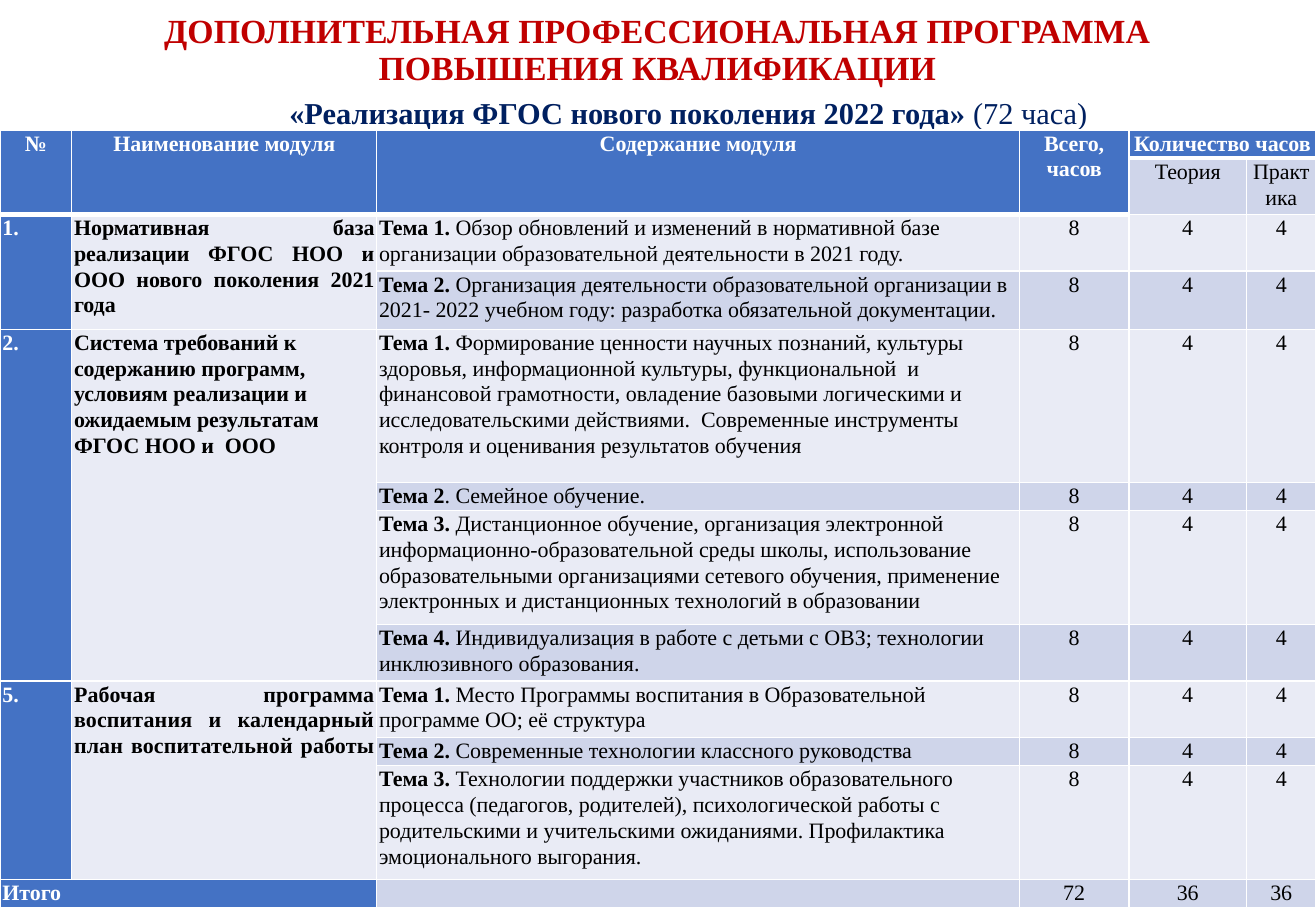
import pptx
import pptx.dml.color
import pptx.enum.text
import pptx.oxml.ns
import pptx.util
from lxml import etree

Inches = pptx.util.Inches
Pt = pptx.util.Pt
ALIGN = pptx.enum.text.PP_ALIGN

FONT = "Times New Roman"
COLORS = {
    "title": "C00000", "subtitle": "002060", "text": "000000",
    "white": "FFFFFF", "blue": "4472C4", "light": "E9EBF5", "dark": "CFD5EA",
}
TITLE_LINES = ["ДОПОЛНИТЕЛЬНАЯ ПРОФЕССИОНАЛЬНАЯ ПРОГРАММА", "ПОВЫШЕНИЯ КВАЛИФИКАЦИИ"]
SUBTITLE = [("«Реализация ФГОС нового поколения 2022 года» ", True), ("(72 часа)", False)]

COLUMN_WIDTHS = [0.59, 2.51, 5.29, 0.9, 0.97, 0.57]
HEADERS = ["№", "Наименование модуля", "Содержание модуля", "Всего, часов", "Количество часов"]
HOUR_KINDS = ["Теория", "Практика"]
HEADER_HEIGHTS = [0.22, 0.46]
TOPIC_HOURS = ["8", "4", "4"]
TOTAL_LABEL, TOTAL_HOURS, TOTAL_HEIGHT = "Итого", ["72", "36", "36"], 0.22

# number, name, alignment, letter spacing, topics as (label, text, row height)
MODULES = [
    ("1.", "Нормативная база реализации ФГОС НОО и ООО нового поколения 2021 года ",
     ALIGN.JUSTIFY, 0, [
        ("Тема 1. ", "Обзор обновлений и изменений в нормативной базе организации "
         "образовательной деятельности в 2021 году.", 0.46),
        ("Тема 2. ", "Организация деятельности образовательной организации в 2021- 2022 "
         "учебном году: разработка обязательной документации.", 0.48),
     ]),
    ("2.", "Система требований к содержанию программ, условиям реализации и ожидаемым "
     "результатам ФГОС НОО и  ООО", ALIGN.LEFT, 0, [
        ("Тема 1. ", "Формирование ценности научных познаний, культуры здоровья, "
         "информационной культуры, функциональной  и финансовой грамотности, овладение "
         "базовыми логическими и исследовательскими действиями.  Современные инструменты "
         "контроля и оценивания результатов обучения", 1.26),
        ("Тема 2", ". Семейное обучение.", 0.22),
        ("Тема 3. ", "Дистанционное обучение, организация электронной "
         "информационно-образовательной среды школы, использование образовательными "
         "организациями сетевого обучения, применение электронных и дистанционных "
         "технологий в образовании", 0.94),
        ("Тема 4. ", "Индивидуализация в работе с детьми с ОВЗ; технологии инклюзивного "
         "образования.", 0.46),
     ]),
    ("5.", "Рабочая программа воспитания и календарный план воспитательной работы ",
     ALIGN.JUSTIFY, 0.1, [
        ("Тема 1. ", "Место Программы воспитания в Образовательной программе ОО; "
         "её структура", 0.46),
        ("Тема 2. ", "Современные технологии классного руководства", 0.22),
        ("Тема 3. ", "Технологии поддержки участников образовательного процесса "
         "(педагогов, родителей), психологической работы с родительскими и учительскими "
         "ожиданиями. Профилактика эмоционального выгорания.", 0.94),
     ]),
]


def rgb(name):
    return pptx.dml.color.RGBColor.from_string(COLORS[name])


def add_run(paragraph, text, size, color, bold):
    run = paragraph.add_run()
    run.text = text
    run.font.name, run.font.size, run.font.bold = FONT, Pt(size), bold
    run.font.color.rgb = rgb(color)
    return run


def add_heading(slide, left, top, width, height, top_inset, line_spacing):
    """Add a wrapping text box and return its centred first paragraph."""
    frame = slide.shapes.add_textbox(*map(Inches, (left, top, width, height))).text_frame
    frame.word_wrap = True
    frame.margin_top = Inches(top_inset)
    paragraph = frame.paragraphs[0]
    paragraph.alignment = ALIGN.CENTER
    paragraph.line_spacing = line_spacing
    return paragraph


def style_cell(cell, fill, bottom_width):
    """Set insets, white borders, fill and the size of an empty line."""
    cell.margin_left = cell.margin_right = Inches(0.02)
    cell.margin_top = cell.margin_bottom = 0
    properties = cell._tc.get_or_add_tcPr()
    for side, width in (("L", 1), ("R", 1), ("T", 1), ("B", bottom_width)):
        line = etree.SubElement(properties, pptx.oxml.ns.qn("a:ln" + side), w=str(Pt(width)))
        solid = etree.SubElement(line, pptx.oxml.ns.qn("a:solidFill"))
        etree.SubElement(solid, pptx.oxml.ns.qn("a:srgbClr"), val=COLORS["white"])
    cell.fill.solid()
    cell.fill.fore_color.rgb = rgb(fill)
    paragraph = cell.text_frame.paragraphs[0]
    paragraph.line_spacing = 1.07
    paragraph.space_after = Pt(10)
    etree.SubElement(paragraph._p, pptx.oxml.ns.qn("a:endParaRPr"), sz="1300")


def write_cell(cell, runs, alignment=ALIGN.CENTER, color="text", letter_spacing=0):
    paragraph = cell.text_frame.paragraphs[0]
    paragraph.alignment = alignment
    for text, bold in runs:
        run = add_run(paragraph, text, 13, color, bold)
        if letter_spacing:
            run._r.get_or_add_rPr().set("spc", str(round(letter_spacing * 100)))


def write_hours(table, row, hours):
    for column, value in enumerate(hours, 6 - len(hours)):
        write_cell(table.cell(row, column), [(value, False)])


def build_table(slide):
    topic_heights = [topic[2] for module in MODULES for topic in module[4]]
    heights = HEADER_HEIGHTS + topic_heights + [TOTAL_HEIGHT]
    last = len(heights) - 1
    table = slide.shapes.add_table(len(heights), len(COLUMN_WIDTHS), 0, Inches(1.07),
                                   Inches(10.83), Inches(sum(heights))).table
    table.first_row = table.horz_banding = False
    for column, width in zip(table.columns, COLUMN_WIDTHS):
        column.width = Inches(width)
    for row, height in enumerate(heights):
        table.rows[row].height = Inches(height)
        for column in range(len(COLUMN_WIDTHS)):
            in_header = row == 0 or (row == 1 and column < 4)
            if in_header or column == 0 or (row == last and column == 1):
                fill = "blue"
            else:
                fill = "light" if column == 1 or row % 2 == 0 else "dark"
            style_cell(table.cell(row, column), fill, 3 if in_header else 1)

    for column, header in enumerate(HEADERS):
        end = table.cell(1, column) if column < 4 else table.cell(0, 5)
        table.cell(0, column).merge(end)
        write_cell(table.cell(0, column), [(header, True)], color="white")
    write_hours(table, 1, HOUR_KINDS)

    row = len(HEADER_HEIGHTS)
    for number, name, alignment, letter_spacing, topics in MODULES:
        for column in (0, 1):
            table.cell(row, column).merge(table.cell(row + len(topics) - 1, column))
        write_cell(table.cell(row, 0), [(number, True)], ALIGN.JUSTIFY, "white")
        write_cell(table.cell(row, 1), [(name, True)], alignment,
                   letter_spacing=letter_spacing)
        for label, text, _ in topics:
            write_cell(table.cell(row, 2), [(label, True), (text, False)], ALIGN.LEFT)
            write_hours(table, row, TOPIC_HOURS)
            row += 1

    table.cell(last, 0).merge(table.cell(last, 1))
    write_cell(table.cell(last, 0), [(TOTAL_LABEL, True)], ALIGN.JUSTIFY, "white")
    write_hours(table, last, TOTAL_HOURS)


def main():
    presentation = pptx.Presentation()
    presentation.slide_width, presentation.slide_height = Inches(10.83), Inches(7.5)
    slide = presentation.slides.add_slide(presentation.slide_layouts[6])

    title = add_heading(slide, 0.74, 0, 9.34, 1.12, 0.12, 0.9)
    for index, line in enumerate(TITLE_LINES):
        if index:
            title.add_line_break()
        add_run(title, line, 20, "title", True)

    subtitle = add_heading(slide, 0.87, 0.68, 9.34, 0.4, 0.05, 1.15)
    subtitle._p.get_or_add_pPr().set("marL", str(Inches(0.25)))
    for text, bold in SUBTITLE:
        add_run(subtitle, text, 18, "subtitle", bold)

    build_table(slide)
    presentation.save("out.pptx")


if __name__ == "__main__":
    main()
